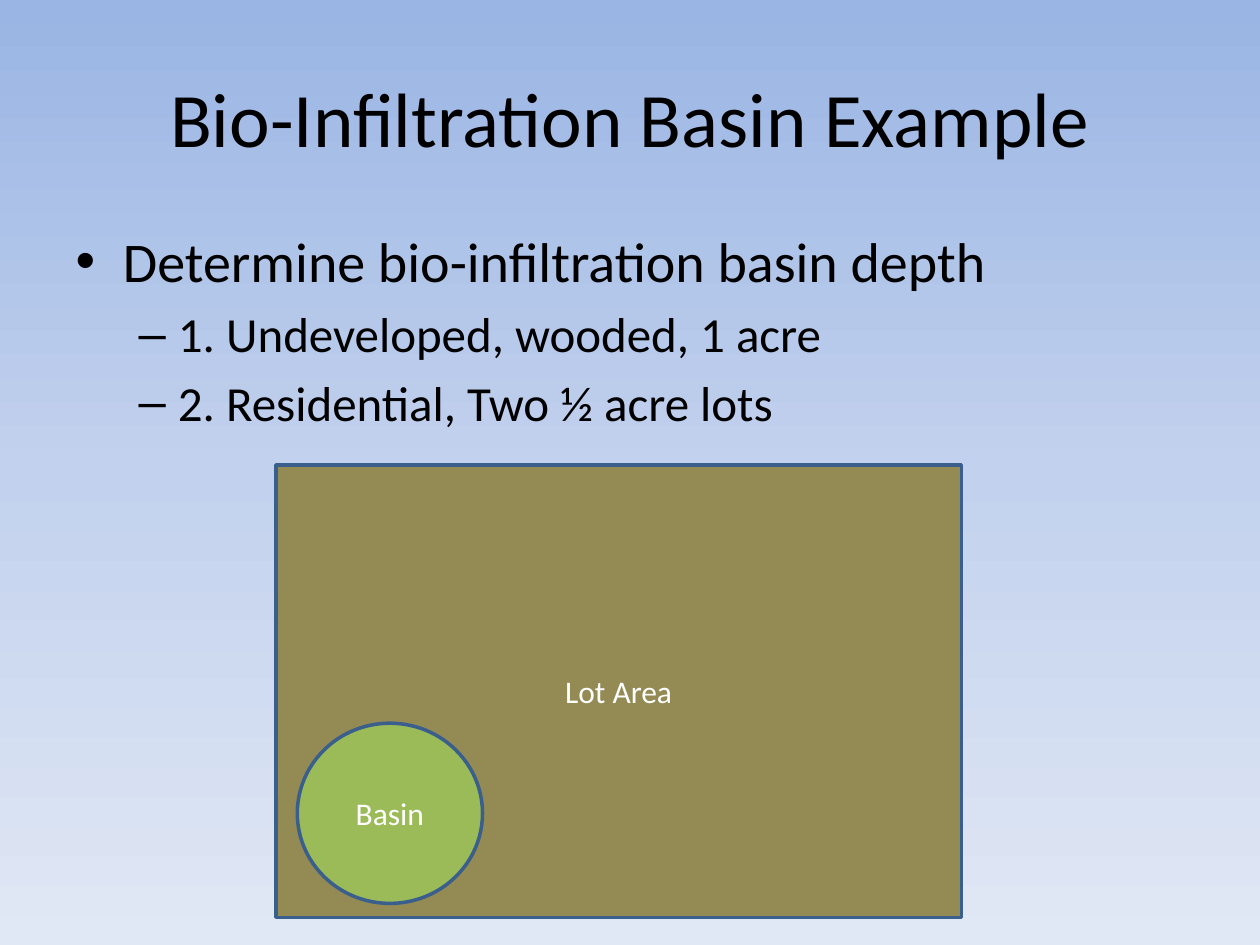
import copy
import pptx
import pptx.util
import pptx.dml.color
import pptx.enum.shapes
import pptx.enum.text
import pptx.oxml.ns

RGB = pptx.dml.color.RGBColor
SHAPE = pptx.enum.shapes.MSO_SHAPE
ALIGN = pptx.enum.text.PP_ALIGN
ANCHOR = pptx.enum.text.MSO_ANCHOR

BLACK = RGB(0x00, 0x00, 0x00)
WHITE = RGB(0xFF, 0xFF, 0xFF)
SOIL = RGB(0x94, 0x8A, 0x54)
GRASS = RGB(0x9B, 0xBB, 0x59)
EDGE = RGB(0x3A, 0x5F, 0x8C)
SKY = [
    (0, RGB(0x9A, 0xB5, 0xE4)),
    (0.5, RGB(0xC2, 0xD1, 0xED)),
    (1, RGB(0xE1, 0xE8, 0xF5)),
]

WIDE, HIGH = 10, 7.5
ITEMS = [
    (0, "Determine bio-infiltration basin depth"),
    (1, "1. Undeveloped, wooded, 1 acre"),
    (1, "2. Residential, Two ½ acre lots"),
]
SIZES = [32, 28]


def paint_sky(slide):
    fill = slide.background.fill
    fill.gradient()
    fill.gradient_angle = 270
    stops = next(slide.element.iter(pptx.oxml.ns.qn("a:gsLst")))
    stops.insert(1, copy.deepcopy(stops[0]))
    for stop, (place, color) in zip(fill.gradient_stops, SKY):
        stop.position = place
        stop.color.rgb = color


def place(shape, box):
    shape.left, shape.top, shape.width, shape.height = map(pptx.util.Inches, box)


def style(para, size, color):
    for run in para.runs:
        run.font.name = "Calibri"
        run.font.size = pptx.util.Pt(size)
        run.font.color.rgb = color


def add_title(slide, text, box):
    title = slide.shapes.title
    place(title, box)
    frame = title.text_frame
    frame.text = text
    frame.vertical_anchor = ANCHOR.MIDDLE
    frame.paragraphs[0].alignment = ALIGN.CENTER
    style(frame.paragraphs[0], 44, BLACK)


def add_list(slide, items, box):
    body = slide.placeholders[1]
    place(body, box)
    frame = body.text_frame
    frame.text = "\n".join(text for level, text in items)
    for para, (level, text) in zip(frame.paragraphs, items):
        para.level = level
        style(para, SIZES[level], BLACK)


def add_zone(slide, kind, text, fill, box):
    zone = slide.shapes.add_shape(kind, *map(pptx.util.Inches, box))
    zone.shadow.inherit = False
    zone.fill.solid()
    zone.fill.fore_color.rgb = fill
    zone.line.color.rgb = EDGE
    zone.line.width = pptx.util.Pt(2)
    frame = zone.text_frame
    frame.text = text
    frame.vertical_anchor = ANCHOR.MIDDLE
    frame.paragraphs[0].alignment = ALIGN.CENTER
    style(frame.paragraphs[0], 18, WHITE)


def main():
    deck = pptx.Presentation()
    deck.slide_width = pptx.util.Inches(WIDE)
    deck.slide_height = pptx.util.Inches(HIGH)
    slide = deck.slides.add_slide(deck.slide_layouts[1])
    edge = WIDE * 0.05
    span = WIDE - 2 * edge
    paint_sky(slide)
    add_title(slide, "Bio-Infiltration Basin Example", (edge, HIGH * 0.04, span, 1.25))
    add_list(slide, ITEMS, (edge, 1.75, span, HIGH * 0.66))
    add_zone(slide, SHAPE.RECTANGLE, "Lot Area", SOIL, (2.19, 3.69, 5.44, 3.59))
    add_zone(slide, SHAPE.OVAL, "Basin", GRASS, (2.36, 5.74, 1.47, 1.43))
    deck.save("out.pptx")


if __name__ == "__main__":
    main()
